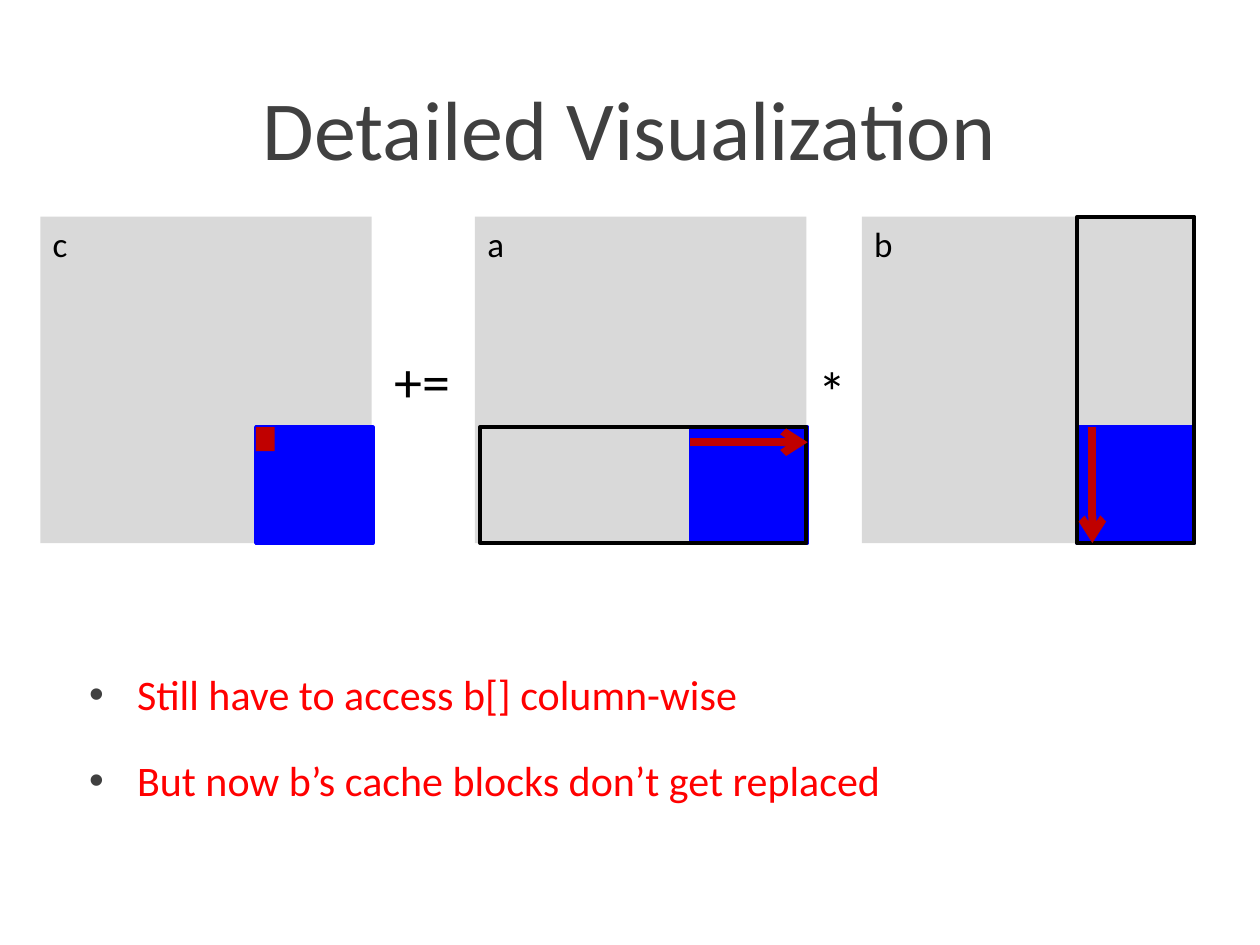
import pptx
import pptx.util
import pptx.dml.color
import pptx.enum.shapes
import pptx.enum.text
import pptx.oxml.xmlchemy

Inches = pptx.util.Inches
Pt = pptx.util.Pt
RGBColor = pptx.dml.color.RGBColor
ALIGN = pptx.enum.text.PP_ALIGN
ANCHOR = pptx.enum.text.MSO_ANCHOR

BLACK = RGBColor(0x00, 0x00, 0x00)
DARK_GRAY = RGBColor(0x40, 0x40, 0x40)
LIGHT_GRAY = RGBColor(0xD9, 0xD9, 0xD9)
BLUE = RGBColor(0x00, 0x00, 0xFF)
DARK_RED = RGBColor(0xC0, 0x00, 0x00)
RED = RGBColor(0xFF, 0x00, 0x00)

MATRIX_TOP, MATRIX_W, MATRIX_H = 1.72, 2.63, 2.59
BLOCK_DX, BLOCK_DY, BLOCK_W, BLOCK_H = 1.71, 1.67, 0.93, 0.92


def add_element(parent, tag, **attributes):
    element = pptx.oxml.xmlchemy.OxmlElement(tag)
    for name, value in attributes.items():
        element.set(name, value)
    parent.append(element)
    return element


def write(p, text, size, color):
    r = p.add_run()
    r.text = text
    formats = {"name": "Calibri", "size": Pt(size)}
    for name, value in formats.items():
        setattr(r.font, name, value)
    r.font.color.rgb = color


def add_text(s, box, anchor=ANCHOR.TOP, wrap=True):
    tf = s.shapes.add_textbox(*map(Inches, box)).text_frame
    tf.word_wrap = wrap
    tf.vertical_anchor = anchor
    return tf


def add_rect(s, box, fill=None, line=None, width=2.25):
    sp = s.shapes.add_shape(pptx.enum.shapes.MSO_SHAPE.RECTANGLE, *map(Inches, box))
    sp.shadow.inherit = False
    if fill is None:
        sp.fill.background()
    else:
        sp.fill.solid()
        sp.fill.fore_color.rgb = fill
    if line is None:
        sp.line.fill.background()
    else:
        sp.line.color.rgb = line
        sp.line.width = Pt(width)
    return sp


def add_arrow(s, x1, y1, x2, y2):
    cx = s.shapes.add_connector(
        pptx.enum.shapes.MSO_CONNECTOR.STRAIGHT, *map(Inches, (x1, y1, x2, y2)))
    cx.line.color.rgb = DARK_RED
    cx.line.width = Pt(4.5)
    spPr = cx._element.spPr
    add_element(spPr.ln, "a:tailEnd", type="arrow")
    add_element(spPr, "a:effectLst")


def add_title(s, box):
    p = add_text(s, box, ANCHOR.MIDDLE).paragraphs[0]
    p.alignment = ALIGN.CENTER
    write(p, "Detailed Visualization", 48, DARK_GRAY)


def add_operator(s, box, text):
    write(add_text(s, box, wrap=False).paragraphs[0], text, 32, BLACK)


def add_matrix(s, box, label):
    x, y, w, h = box
    tf = add_rect(s, box, LIGHT_GRAY).text_frame
    tf.vertical_anchor = ANCHOR.TOP
    p = tf.paragraphs[0]
    p.alignment = ALIGN.LEFT
    write(p, label, 20, BLACK)
    bx, by = x + BLOCK_DX, y + BLOCK_DY
    add_rect(s, (bx, by, BLOCK_W, BLOCK_H), BLUE, BLUE, 2)
    if label == "c":
        add_rect(s, (bx, by, 0.15, 0.19), DARK_RED)
    elif label == "a":
        add_rect(s, (x + 0.04, by, h, BLOCK_H), line=BLACK)
        add_arrow(s, bx, by + 0.12, bx + BLOCK_W, by + 0.12)
    else:
        add_rect(s, (bx, y, BLOCK_W, h), line=BLACK)
        add_arrow(s, bx + 0.12, by, bx + 0.12, by + BLOCK_H)


def add_bullets(s, box, lines):
    tf = add_text(s, box)
    for i, line in enumerate(lines):
        p = tf.add_paragraph() if i else tf.paragraphs[0]
        pPr = p._p.get_or_add_pPr()
        pPr.set("marL", str(Inches(0.38)))
        pPr.set("indent", str(Inches(-0.38)))
        add_element(add_element(pPr, "a:buClr"), "a:srgbClr", val=str(DARK_GRAY))
        add_element(pPr, "a:buFont", typeface="Arial")
        add_element(pPr, "a:buChar", char="•")
        if i:
            p.space_before = Pt(20)
        write(p, line, 24, RED)


def main():
    prs = pptx.Presentation()
    prs.slide_width, prs.slide_height = Inches(10), Inches(7.5)
    s = prs.slides.add_slide(prs.slide_layouts[6])
    add_title(s, (0.98, 0.27, 8.03, 1.47))
    for label, x in {"c": 0.32, "a": 3.77, "b": 6.84}.items():
        add_matrix(s, (x, MATRIX_TOP, MATRIX_W, MATRIX_H), label)
    add_operator(s, (3.03, 2.7, 0.65, 0.48), "+=")
    add_operator(s, (6.4, 2.78, 0.43, 0.64), "*")
    add_bullets(s, (0.61, 5.26, 8.64, 1.21), [
        "Still have to access b[] column-wise",
        "But now b’s cache blocks don’t get replaced",
    ])
    prs.save("out.pptx")


if __name__ == "__main__":
    main()
